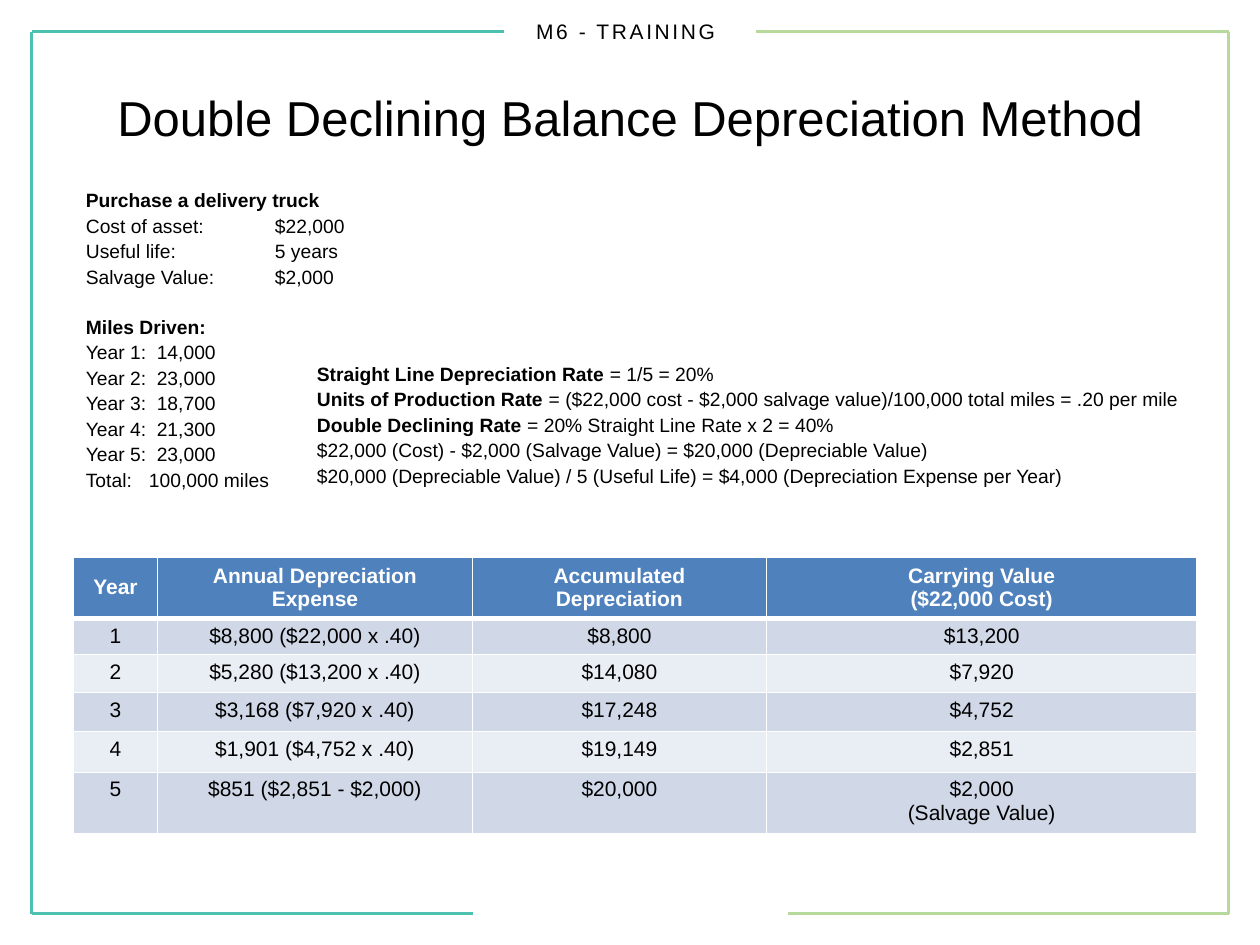
from lxml import etree
from pptx import Presentation
from pptx.dml.color import RGBColor
from pptx.enum import shapes, text
from pptx.oxml import ns
from pptx.util import Pt

TEAL, GREEN, BLACK, WHITE = "4CC1B0", "B7DA9C", "000000", "FFFFFF"
HEADER_BLUE, BAND_DARK, BAND_LIGHT = "4F81BD", "D0D8E8", "E9EDF4"
LINE_GAP, SECTION_GAP = 2.7, 16.8
LEFT, CENTER = text.PP_ALIGN.LEFT, text.PP_ALIGN.CENTER
MIDDLE, TOP, BOTTOM = text.MSO_ANCHOR.MIDDLE, text.MSO_ANCHOR.TOP, text.MSO_ANCHOR.BOTTOM

RATES = [
    ("Straight Line Depreciation Rate", " = 1/5 = 20%"),
    ("Units of Production Rate ",
     "= ($22,000 cost - $2,000 salvage value)/100,000 total miles = .20 per mile"),
    ("Double Declining Rate ", "= 20% Straight Line Rate x 2 = 40%"),
    ("", "$22,000 (Cost) - $2,000 (Salvage Value) = $20,000 (Depreciable Value)"),
    ("", "$20,000 (Depreciable Value) / 5 (Useful Life) = $4,000 (Depreciation Expense per Year)"),
]
ASSET = [("Cost of asset:", "$22,000"), ("Useful life:", "5 years"), ("Salvage Value:", "$2,000")]
MILES = ["14,000", "23,000", "18,700", "21,300", "23,000"]
SCHEDULE = [
    ("Year", "Annual Depreciation Expense", "Accumulated\vDepreciation",
     "Carrying Value\n($22,000 Cost)"),
    ("1", "$8,800 ($22,000 x .40)", "$8,800", "$13,200"),
    ("2", "$5,280 ($13,200 x .40)", "$14,080", "$7,920"),
    ("3", "$3,168 ($7,920 x .40)", "$17,248", "$4,752"),
    ("4", "$1,901 ($4,752 x .40)", "$19,149", "$2,851"),
    ("5", "$851 ($2,851 - $2,000)", "$20,000", "$2,000\n(Salvage Value)"),
]
COLUMN_WIDTHS = [48, 180, 168, 246]
ROW_HEIGHTS = [34, 20.6, 21.7, 22.3, 23.2, 34]


def rgb(color):
    return RGBColor.from_string(color)


def write(paragraph, content, size=11, bold=False, color=BLACK, align=LEFT,
          spacing=None, before=0, line=None, tab=None):
    paragraph.alignment = align
    if line:
        paragraph.line_spacing = line
    paragraph.space_before = Pt(before)
    if tab:
        stops = etree.SubElement(paragraph._p.get_or_add_pPr(), ns.qn("a:tabLst"))
        etree.SubElement(stops, ns.qn("a:tab"), pos=str(Pt(tab)), algn="l")
    for part_number, part in enumerate(content.split("\v")):
        if part_number:
            paragraph.add_line_break()
        run = paragraph.add_run()
        run.text = part
        font = run.font
        font.name, font.size, font.bold = "Arial", Pt(size), bold
        font.color.rgb = rgb(color)
        if spacing:
            run._r.get_or_add_rPr().set("spc", str(int(spacing * 100)))


def next_paragraph(frame):
    first = frame.paragraphs[0]
    return frame.add_paragraph() if first.runs else first


def add_frame(slide, left, top, width, height, anchor=MIDDLE):
    frame = slide.shapes.add_textbox(Pt(left), Pt(top), Pt(width), Pt(height)).text_frame
    frame.word_wrap = True
    frame.vertical_anchor = anchor
    return frame


def add_border(slide, color, x1, y1, x2, y2):
    border = slide.shapes.add_connector(
        shapes.MSO_CONNECTOR.STRAIGHT, Pt(x1), Pt(y1), Pt(x2), Pt(y2))
    border.line.color.rgb = rgb(color)
    border.line.width = Pt(2.25)
    etree.SubElement(border._element.spPr, ns.qn("a:effectLst"))


def add_page_frame(slide):
    for color, outer, top_end, bottom_end in ((TEAL, 18, 288, 270), (GREEN, 702, 432, 450)):
        add_border(slide, color, outer, 18, outer, 522)
        add_border(slide, color, outer, 522, bottom_end, 522)
        add_border(slide, color, outer, 18, top_end, 18)


def add_rates(slide):
    frame = add_frame(slide, 174, 174, 510, 108, BOTTOM)
    for index, (label, formula) in enumerate(RATES):
        paragraph = next_paragraph(frame)
        gap = LINE_GAP if index else 0
        if label:
            write(paragraph, label, bold=True)
        write(paragraph, formula, before=gap, line=0.9)


def add_truck_facts(slide):
    frame = add_frame(slide, 42, 90, 174, 210)
    write(next_paragraph(frame), "Purchase a delivery truck", bold=True, line=0.9)
    for label, value in ASSET:
        write(next_paragraph(frame), f"{label}\t{value}", before=LINE_GAP, line=0.9, tab=108)
    write(next_paragraph(frame), "Miles Driven:", bold=True, before=SECTION_GAP, line=0.9)
    for year, miles in enumerate(MILES, 1):
        write(next_paragraph(frame), f"Year {year}:\t{miles}", before=LINE_GAP, line=0.9, tab=40.5)
    write(next_paragraph(frame), "Total:\t100,000 miles", before=LINE_GAP, line=0.9, tab=36)


def set_cell_borders(cell, bottom_width):
    properties = cell._tc.get_or_add_tcPr()
    for side, width in (("L", 1), ("R", 1), ("T", 1), ("B", bottom_width)):
        edge = etree.SubElement(properties, ns.qn(f"a:ln{side}"), w=str(Pt(width)))
        fill = etree.SubElement(edge, ns.qn("a:solidFill"))
        etree.SubElement(fill, ns.qn("a:srgbClr"), val=WHITE)


def add_schedule(slide):
    table = slide.shapes.add_table(
        len(SCHEDULE), len(COLUMN_WIDTHS), Pt(42), Pt(318.2),
        Pt(sum(COLUMN_WIDTHS)), Pt(sum(ROW_HEIGHTS))).table
    for column, width in zip(table.columns, COLUMN_WIDTHS):
        column.width = Pt(width)
    for row_number, (row, entries) in enumerate(zip(table.rows, SCHEDULE)):
        row.height = Pt(ROW_HEIGHTS[row_number])
        header = row_number == 0
        band = HEADER_BLUE if header else BAND_DARK if row_number % 2 else BAND_LIGHT
        for cell, entry in zip(row.cells, entries):
            set_cell_borders(cell, 3 if header else 1)
            cell.fill.solid()
            cell.fill.fore_color.rgb = rgb(band)
            cell.margin_top = cell.margin_bottom = Pt(3.2)
            cell.vertical_anchor = MIDDLE if header else TOP
            for entry_line in entry.split("\n"):
                write(next_paragraph(cell.text_frame), entry_line, size=12, bold=header,
                      color=WHITE if header else BLACK, align=CENTER)


def main():
    presentation = Presentation()
    presentation.slide_width, presentation.slide_height = Pt(720), Pt(540)
    slide = presentation.slides.add_slide(presentation.slide_layouts[6])
    add_page_frame(slide)
    course = add_frame(slide, 0, 0, 720, 36)
    write(next_paragraph(course), "M6 - TRAINING ", size=12, align=CENTER, spacing=1.5)
    add_rates(slide)
    add_schedule(slide)
    title = add_frame(slide, 36, 21.6, 648, 90)
    write(next_paragraph(title), "Double Declining Balance Depreciation Method",
          size=28, align=CENTER)
    add_truck_facts(slide)
    presentation.save("out.pptx")


if __name__ == "__main__":
    main()
